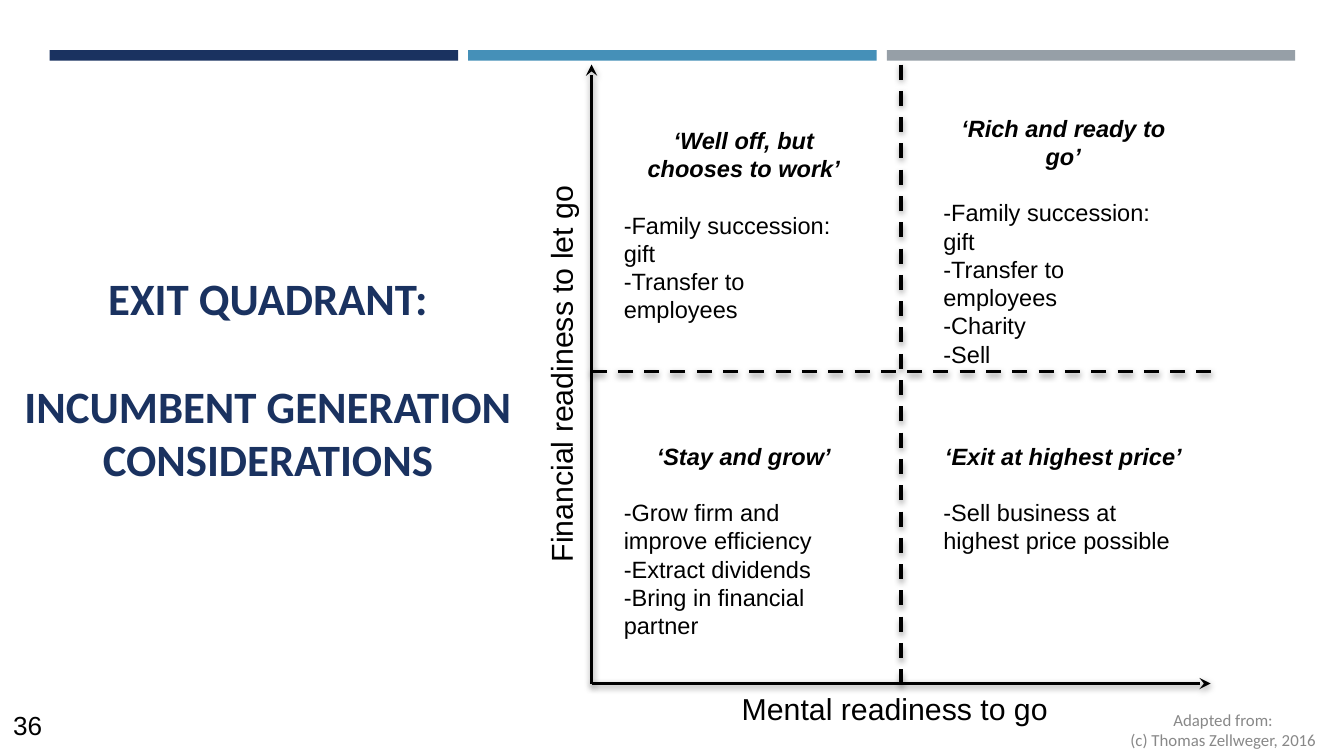
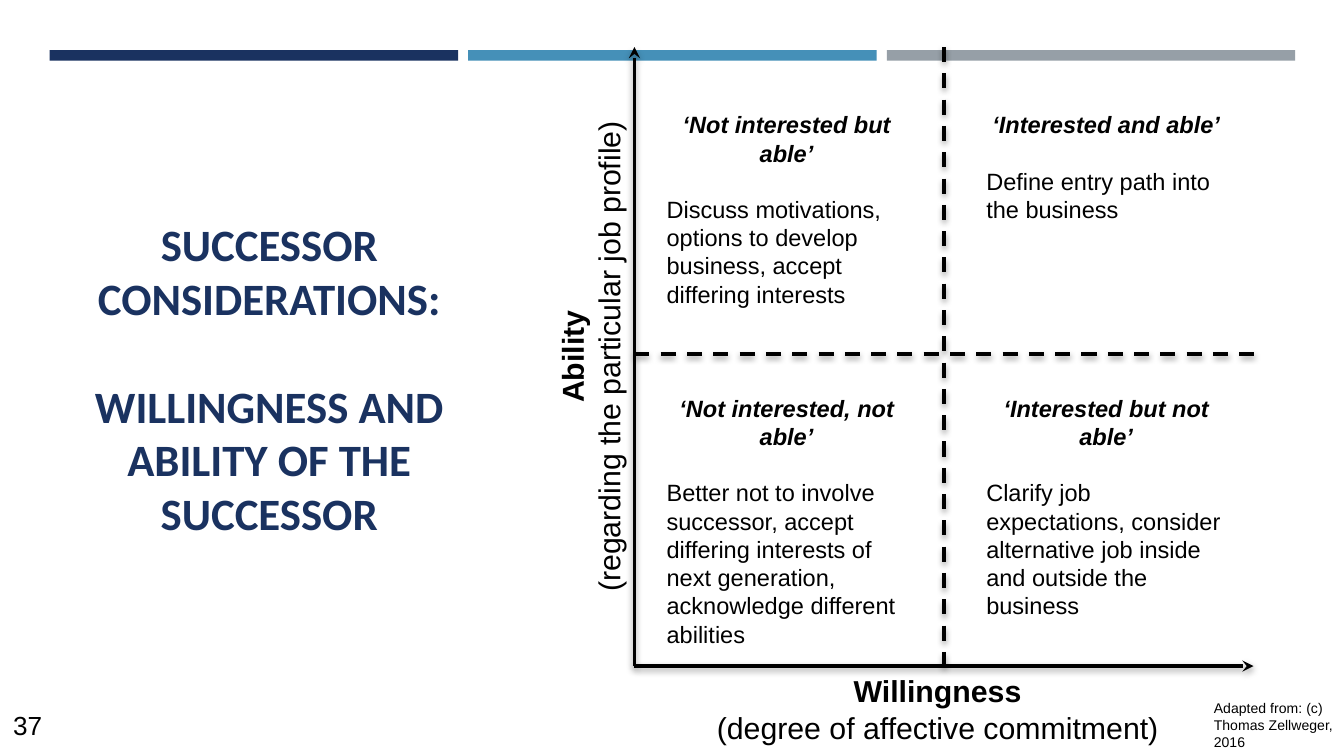
from pptx import Presentation
from pptx.dml.color import RGBColor
from pptx.enum.dml import MSO_LINE
from pptx.enum.shapes import MSO_CONNECTOR, MSO_SHAPE
from pptx.enum.text import MSO_ANCHOR, PP_ALIGN
from pptx.oxml import parse_xml
from pptx.oxml.ns import nsdecls
from pptx.util import Cm, Pt

HUES = {"navy": "1A3260", "blue": "4590B8", "gray": "969FA7",
        "note": "888888", "ink": "000000"}

FONTS = {
    "title": {"name": "Calibri", "size": Pt(24), "bold": True},
    "page": {"name": "Arial", "size": Pt(14)},
    "head": {"name": "Arial", "size": Pt(12.6), "bold": True, "italic": True},
    "body": {"name": "Arial", "size": Pt(12.6)},
    "axis": {"name": "Arial", "size": Pt(16.2)},
    "strong": {"name": "Arial", "size": Pt(16.2), "bold": True},
    "credit": {"name": "Calibri", "size": Pt(9)},
    "small": {"name": "Arial", "size": Pt(7.5)},
}
TONES = {"title": "navy", "credit": "note"}
MID = {"alignment": PP_ALIGN.CENTER}
PARAS = {
    "title": {**MID, "space_after": Pt(29)},
    "head": {**MID, "space_after": Pt(15)},
    "axis": MID, "strong": MID, "credit": MID,
}
TIGHT = {"margin_left": Cm(0.18), "margin_right": Cm(0.18),
         "margin_top": Cm(0.1), "margin_bottom": Cm(0.1)}
CENTRE = {"vertical_anchor": MSO_ANCHOR.MIDDLE}

SIDE = 11.7
ROW = 5.8
COLS = (0.36, 6.4)

SHADOW = (f'<a:effectLst {nsdecls("a")}><a:outerShdw blurRad="40000" dist="20000" '
          'dir="5400000" rotWithShape="0"><a:srgbClr val="000000">'
          '<a:alpha val="36000"/></a:srgbClr></a:outerShdw></a:effectLst>')
ARROW = f'<a:tailEnd {nsdecls("a")} type="stealth"/>'


def apply(item, values):
    for key, value in values.items():
        setattr(item, key, value)


def hue(name):
    return RGBColor.from_string(HUES[name])


def write(slide, box, lines, frame=None):
    shape = slide.shapes.add_textbox(*map(Cm, box))
    text = shape.text_frame
    apply(text, {"word_wrap": True, **(frame or {})})
    for i, (style, words) in enumerate(lines):
        para = text.add_paragraph() if i else text.paragraphs[0]
        apply(para, PARAS.get(style, {}))
        run = para.add_run()
        run.text = words
        apply(run.font, FONTS[style])
        run.font.color.rgb = hue(TONES.get(style, "ink"))
    return shape


def rule(slide, start, end, dash=False):
    line = slide.shapes.add_connector(MSO_CONNECTOR.STRAIGHT, *map(Cm, start + end))
    line.line.color.rgb = hue("ink")
    line.line.width = Pt(2)
    if dash:
        line.line.dash_style = MSO_LINE.DASH
    else:
        line.line._get_or_add_ln().append(parse_xml(ARROW))
    line._element.spPr.append(parse_xml(SHADOW))


def bands(slide, left, top, width, height, pitch):
    for i, name in enumerate(("navy", "blue", "gray")):
        bar = slide.shapes.add_shape(MSO_SHAPE.RECTANGLE, Cm(left + i * pitch),
                                     Cm(top), Cm(width), Cm(height))
        bar.shadow.inherit = False
        bar.fill.solid()
        bar.fill.fore_color.rgb = hue(name)
        bar.line.fill.background()


def title(slide, box, lines):
    pad = {"margin_top": Cm(0.25), "margin_bottom": Cm(0.25), **CENTRE}
    shape = write(slide, box, [("title", line) for line in lines], pad)
    shape.text_frame.paragraphs[-1].space_after = Pt(0)


def labels(slide, left, top, across, up, high, gap):
    write(slide, (left, top + SIDE, 11.46, high), across)
    side = write(slide, (left - gap - high / 2 - SIDE / 2,
                         top + SIDE / 2 - high / 2, SIDE, high), up)
    side.rotation = 270


def grid(slide, left, top, cells):
    right, base = left + SIDE, top + SIDE
    rule(slide, (left, top + ROW), (right, top + ROW), True)
    rule(slide, (left + SIDE / 2, top), (left + SIDE / 2, base), True)
    rule(slide, (left, base), (right, base))
    rule(slide, (left, base), (left, top))
    for i, (drop, high, head, *body) in enumerate(cells):
        lines = [("head", head)] + [("body", words) for words in body]
        write(slide, (left + COLS[i % 2], top + drop, 5.03, high), lines)


def page(deck, number, heading, credit, spot, cells, axes):
    slide = deck.slides.add_slide(deck.slide_layouts[6])
    bands(slide, 0.94, 0.95, 7.72, 0.2, 7.91)
    write(slide, (0, 13.28, 1.22, 0.89), [("page", number)])
    title(slide, *heading)
    write(slide, *credit)
    grid(slide, *spot, cells)
    labels(slide, *spot, *axes)


def main():
    deck = Presentation()
    deck.slide_width, deck.slide_height = Cm(25.4), Cm(14.29)
    page(
        deck, "36",
        ((0, 2.69, 10.13, 8.92),
         ["EXIT QUADRANT:", "INCUMBENT GENERATION CONSIDERATIONS"]),
        ((20.12, 13.41, 5.99, 0.76),
         [("credit", "Adapted from:"), ("credit", "(c) Thomas Zellweger, 2016")],
         {**TIGHT, **CENTRE}),
        (11.18, 1.22),
        [(1.04, 4.04, "‘Well off, but chooses to work’",
          "-Family succession: gift", "-Transfer to employees"),
         (0.81, 5.11, "‘Rich and ready to go’", "-Family succession: gift",
          "-Transfer to employees", "-Charity", "-Sell"),
         (7.01, 4.04, "‘Stay and grow’", "-Grow firm and improve efficiency",
          "-Extract dividends", "-Bring in financial partner"),
         (7.01, 2.41, "‘Exit at highest price’",
          "-Sell business at highest price possible")],
        ([("axis", "Mental readiness to go")],
         [("axis", "Financial readiness to let go")], 0.94, 0.11),
    )
    page(
        deck, "37",
        ((0.66, 2.69, 8.86, 8.92),
         ["SUCCESSOR CONSIDERATIONS:",
          "WILLINGNESS AND ABILITY OF THE SUCCESSOR"]),
        ((22.76, 13.13, 2.9, 1.14),
         [("small", "Adapted from: (c) Thomas Zellweger, 2016")], TIGHT),
        (11.99, 0.89),
        [(1.07, 4.04, "‘Not interested but able’",
          "Discuss motivations, options to develop business, "
          "accept differing interests"),
         (1.07, 2.41, "‘Interested and able’",
          "Define entry path into the business"),
         (6.43, 5.11, "‘Not interested, not able’",
          "Better not to involve successor, accept differing interests of "
          "next generation, acknowledge different abilities"),
         (6.43, 4.57, "‘Interested but not able’",
          "Clarify job expectations, consider alternative job inside "
          "and outside the business")],
        ([("strong", "Willingness"), ("axis", "(degree of affective commitment)")],
         [("strong", "Ability"),
          ("axis", "(regarding the particular job profile)")], 1.65, 0),
    )
    deck.save("out.pptx")


if __name__ == "__main__":
    main()
